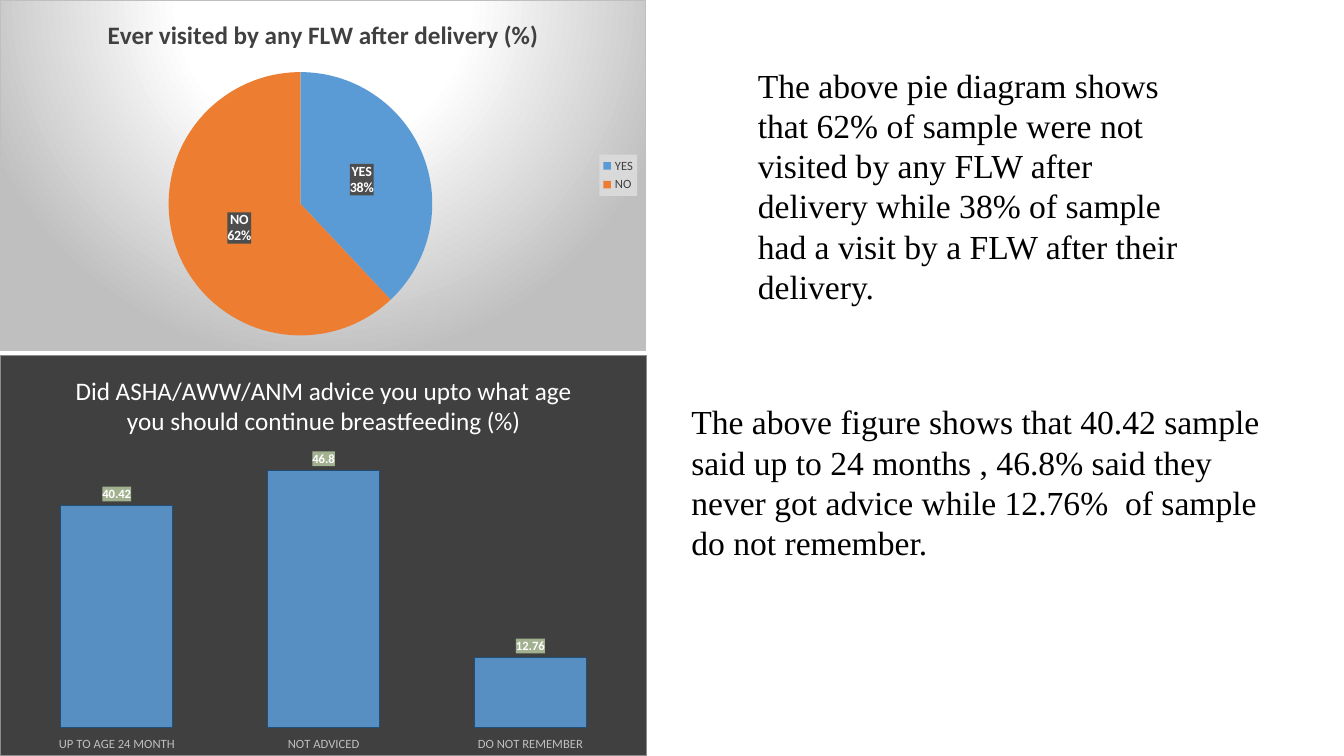
from lxml import etree
from pptx import Presentation
from pptx.chart.data import CategoryChartData
from pptx.dml.color import RGBColor
from pptx.enum.chart import (
    XL_CHART_TYPE as ChartType,
    XL_LABEL_POSITION as LabelPosition,
    XL_LEGEND_POSITION as LegendPosition,
    XL_TICK_LABEL_POSITION as TickLabelPosition,
    XL_TICK_MARK as TickMark,
)
from pptx.oxml import parse_xml
from pptx.util import Pt

COLORS = {
    "text": "000000",
    "white": "FFFFFF",
    "dark": "404040",
    "silver": "BFBFBF",
    "border": "8C8C8C",
    "legend": "D9D9D9",
    "pie_label": "4D4D4D",
    "column_label": "A2B18F",
    "blue": "5B9BD5",
    "navy": "1F4E79",
    "orange": "ED7D31",
}
CHART_FONT = "Calibri"
BODY_FONT = "Times New Roman"
NAMESPACES = (
    'xmlns:c="http://schemas.openxmlformats.org/drawingml/2006/chart" '
    'xmlns:a="http://schemas.openxmlformats.org/drawingml/2006/main"'
)

PIE_BOX = (0, 0, 461.5, 250.5)
PIE_TEXT_BOX = (534.25, 42.5, 335.5, 211)
COLUMN_BOX = (0, 253.5, 462.25, 286.5)
COLUMN_TEXT_BOX = (486.75, 283, 421.25, 152.75)


def rgb(name):
    return RGBColor.from_string(COLORS[name])


def style_font(font, size, color, bold=False, name=CHART_FONT):
    font.name = name
    font.size = Pt(size)
    font.bold = bold
    font.color.rgb = rgb(color)


def solid_xml(color):
    return f'<a:solidFill><a:srgbClr val="{COLORS[color]}"/></a:solidFill>'


def radial_xml():
    stops = "".join(
        f'<a:gs pos="{position * 1000}"><a:srgbClr val="{COLORS[color]}"/></a:gs>'
        for position, color in ((0, "white"), (39, "white"), (100, "silver"))
    )
    return (
        f'<a:gradFill><a:gsLst>{stops}</a:gsLst><a:path path="circle">'
        '<a:fillToRect l="50000" t="-80000" r="50000" b="180000"/>'
        "</a:path></a:gradFill>"
    )


def line_xml(color, width):
    return f'<a:ln w="{Pt(width)}">{solid_xml(color)}</a:ln>'


def paint(chart, parent, content):
    text_properties = chart.element.xpath(f"{parent}/c:txPr")[0]
    text_properties.addprevious(
        parse_xml(f"<c:spPr {NAMESPACES}>{content}</c:spPr>")
    )


def place_plot(chart, left, top, width, height):
    plot_area = chart.element.xpath(".//c:plotArea")[0]
    for layout in plot_area.xpath("./c:layout"):
        plot_area.remove(layout)
    sizes = "".join(
        f'<c:{tag} val="{value}"/>'
        for tag, value in (("x", left), ("y", top), ("w", width), ("h", height))
    )
    plot_area.insert(0, parse_xml(
        f'<c:layout {NAMESPACES}><c:manualLayout><c:layoutTarget val="inner"/>'
        f'<c:xMode val="edge"/><c:yMode val="edge"/>{sizes}'
        "</c:manualLayout></c:layout>"
    ))


def add_chart(slide, box, chart_type, title, values, title_color, title_bold, frame):
    data = CategoryChartData()
    data.categories = list(values)
    data.add_series(title, list(values.values()))
    chart = slide.shapes.add_chart(chart_type, *map(Pt, box), data).chart
    style_font(chart.font, 10, "text")
    paint(chart, ".", frame)
    chart.has_title = True
    chart.chart_title.include_in_layout = False
    title_frame = chart.chart_title.text_frame
    title_frame.text = title
    style_font(title_frame.paragraphs[0].runs[0].font, 18, title_color, title_bold)
    plot = chart.plots[0]
    plot.has_data_labels = True
    return chart, plot


def add_visit_pie(slide, box):
    chart, plot = add_chart(
        slide, box, ChartType.PIE, "Ever visited by any FLW after delivery (%)",
        {"YES": 38, "NO": 62}, "dark", True,
        radial_xml() + line_xml("silver", 0.75),
    )
    place_plot(chart, 0.26, 0.205, 0.41, 0.753)
    for index, color in enumerate(("blue", "orange")):
        fill = plot.series[0].points[index].format.fill
        fill.solid()
        fill.fore_color.rgb = rgb(color)
    labels = plot.data_labels
    labels.show_value = False
    labels.show_percentage = True
    labels.show_category_name = True
    labels.number_format = "0%"
    labels.number_format_is_linked = False
    labels.position = LabelPosition.CENTER
    style_font(labels.font, 10, "white", True)
    paint(chart, ".//c:dLbls", solid_xml("pie_label"))
    separator = parse_xml(f"<c:separator {NAMESPACES}>\n</c:separator>")
    chart.element.xpath(".//c:dLbls/c:showBubbleSize")[0].addnext(separator)
    chart.has_legend = True
    chart.legend.position = LegendPosition.RIGHT
    chart.legend.include_in_layout = False
    style_font(chart.legend.font, 9, "dark")
    paint(chart, ".//c:legend", solid_xml("legend"))


def add_advice_columns(slide, box):
    chart, plot = add_chart(
        slide, box, ChartType.COLUMN_CLUSTERED,
        "Did ASHA/AWW/ANM advice you upto what age you should continue breastfeeding (%)",
        {"UP TO AGE 24 MONTH": 40.42, "NOT ADVICED": 46.8, "DO NOT REMEMBER": 12.76},
        "white", False, solid_xml("dark") + line_xml("border", 0.5),
    )
    place_plot(chart, 0.02, 0.243, 0.96, 0.687)
    chart.has_legend = False
    plot.gap_width = 84
    plot.vary_by_categories = False
    column_format = plot.series[0].format
    column_format.fill.solid()
    column_format.fill.fore_color.rgb = rgb("blue")
    column_color = chart.element.xpath(".//c:ser/c:spPr/a:solidFill/a:srgbClr")[0]
    alpha_tag = "{http://schemas.openxmlformats.org/drawingml/2006/main}alpha"
    etree.SubElement(column_color, alpha_tag).set("val", "88000")
    column_format.line.color.rgb = rgb("navy")
    column_format.line.width = Pt(0.75)
    labels = plot.data_labels
    labels.show_value = True
    labels.position = LabelPosition.OUTSIDE_END
    style_font(labels.font, 9, "white", True)
    paint(chart, ".//c:dLbls", solid_xml("column_label"))
    category_axis = chart.category_axis
    category_axis.major_tick_mark = TickMark.NONE
    category_axis.tick_label_position = TickLabelPosition.LOW
    category_axis.format.line.fill.background()
    style_font(category_axis.tick_labels.font, 9, "silver")
    value_axis = chart.value_axis
    value_axis.minimum_scale = 0
    value_axis.maximum_scale = 50
    value_axis.has_major_gridlines = False
    value_axis.visible = False


def add_finding(slide, box, text):
    text_frame = slide.shapes.add_textbox(*map(Pt, box)).text_frame
    text_frame.word_wrap = True
    text_frame.text = text
    style_font(text_frame.paragraphs[0].runs[0].font, 24, "text", name=BODY_FONT)


def main():
    presentation = Presentation()
    presentation.slide_width = Pt(960)
    presentation.slide_height = Pt(540)
    slide = presentation.slides.add_slide(presentation.slide_layouts[6])
    add_visit_pie(slide, PIE_BOX)
    add_finding(slide, PIE_TEXT_BOX, (
        "The above pie diagram shows that 62% of sample were not visited by any FLW "
        "after delivery while 38% of sample had a visit by a FLW after their delivery."
    ))
    add_advice_columns(slide, COLUMN_BOX)
    add_finding(slide, COLUMN_TEXT_BOX, (
        "The above figure shows that 40.42 sample said up to 24 months , 46.8% said "
        "they never got advice while 12.76%  of sample do not remember."
    ))
    presentation.save("out.pptx")


if __name__ == "__main__":
    main()
